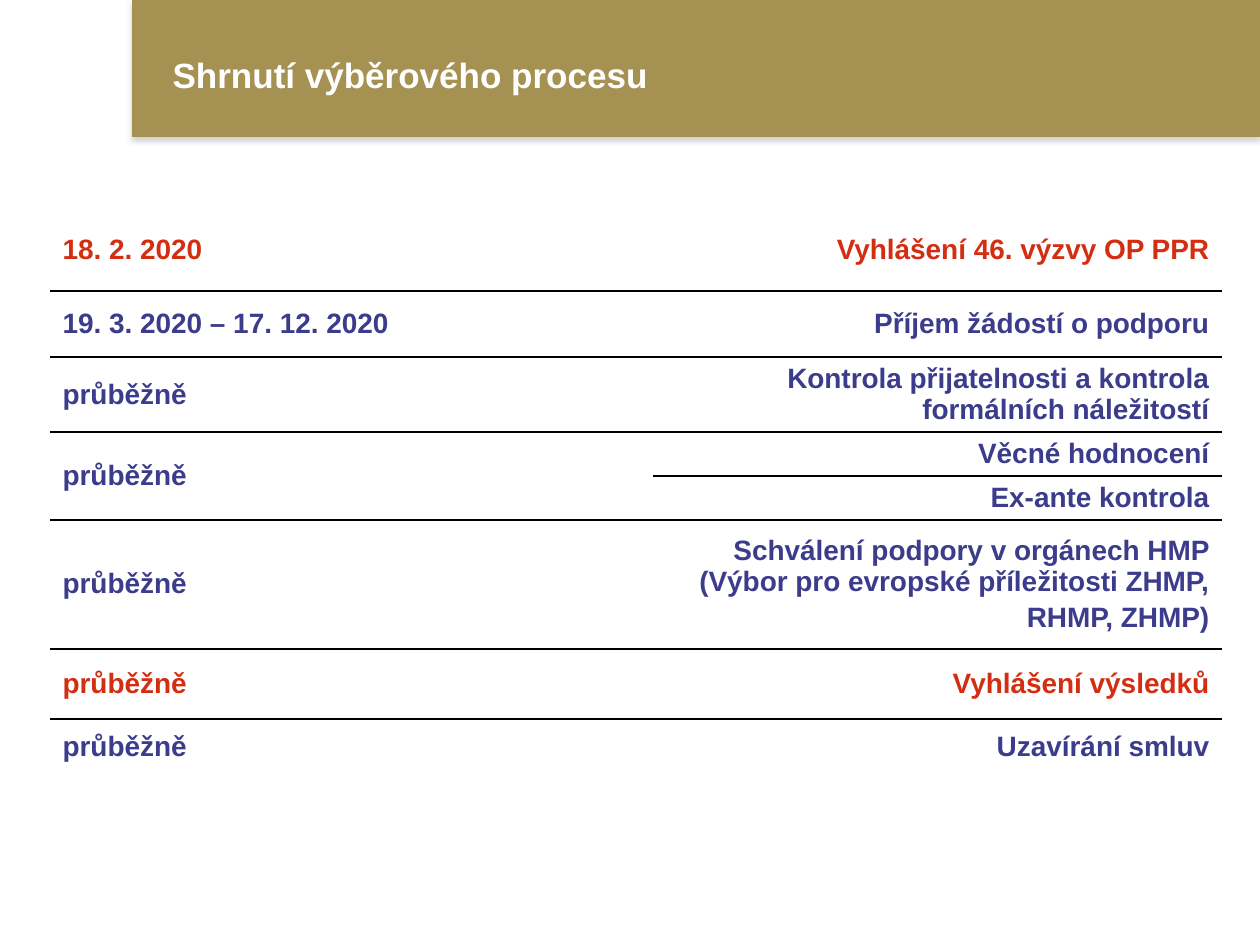
from lxml.etree import SubElement
from pptx import Presentation
from pptx.dml.color import RGBColor
from pptx.enum.shapes import MSO_SHAPE
from pptx.enum.text import MSO_ANCHOR, PP_ALIGN
from pptx.oxml import parse_xml
from pptx.oxml.ns import nsdecls, qn
from pptx.util import Emu, Pt

PX_PER_INCH = 126
COLOURS = {
    "band": "A59253",
    "shadow": "808080",
    "title": "FFFFFF",
    "milestone": "D42E12",
    "step": "3C3C8C",
    "rule": "000000",
}
PLAIN_STYLE = "{2D5ABB26-0587-4C30-8999-92F81FD0307C}"
COLUMN_WIDTHS = [603, 569]
ONGOING = "průběžně"
SCHEDULE = [
    (83, "18. 2. 2020", "Vyhlášení 46. výzvy OP PPR", "milestone"),
    (66, "19. 3. 2020 – 17. 12. 2020", "Příjem žádostí o podporu", "step"),
    (75, ONGOING, "Kontrola přijatelnosti a kontrola formálních náležitostí", "step"),
    (44, ONGOING, "Věcné hodnocení", "step"),
    (44, "", "Ex-ante kontrola", "step"),
    (129, ONGOING, "Schválení podpory v orgánech HMP (Výbor pro evropské "
     "příležitosti ZHMP,\nRHMP, ZHMP)", "step"),
    (70, ONGOING, "Vyhlášení výsledků", "milestone"),
    (57, ONGOING, "Uzavírání smluv", "step"),
]


def px(length):
    """Convert whole pixels to EMU."""
    return Emu(round(length * 914400 / PX_PER_INCH))


def colour(name):
    """Look up a named colour."""
    return RGBColor.from_string(COLOURS[name])


def format_text(frame, size, colour_name, align):
    """Apply bold Arial and alignment to every paragraph."""
    for index, paragraph in enumerate(frame.paragraphs):
        paragraph.alignment = align
        paragraph.space_before = Pt(size * 0.2 if index else 0)
        for run in paragraph.runs:
            run.font.name = "Arial"
            run.font.size = Pt(size)
            run.font.bold = True
            run.font.color.rgb = colour(colour_name)


def add_band(slide):
    """Draw the header band with its soft shadow behind the title."""
    band = slide.shapes.add_shape(MSO_SHAPE.RECTANGLE, px(132), px(0), px(1128), px(137))
    band.fill.solid()
    band.fill.fore_color.rgb = colour("band")
    band.line.fill.background()
    band.shadow.inherit = False
    effects = band._element.spPr.find(qn("a:effectLst"))
    shadow = SubElement(effects, qn("a:outerShdw"), blurRad=str(Pt(3.1)),
                        dist=str(Pt(1.8)), dir="5400000", rotWithShape="0")
    tint = SubElement(shadow, qn("a:srgbClr"), val=COLOURS["shadow"])
    SubElement(tint, qn("a:alpha"), val="35000")
    slide.shapes._spTree.insert(2, band._element)


def set_title(slide, wording):
    """Place and format the slide title."""
    title = slide.shapes.title
    title.left, title.top, title.width, title.height = map(px, (160, -14, 1061, 183))
    frame = title.text_frame
    frame.text = wording
    frame.word_wrap = True
    frame.vertical_anchor = MSO_ANCHOR.MIDDLE
    frame.paragraphs[0].line_spacing = 0.9
    format_text(frame, 20, "title", PP_ALIGN.LEFT)


def add_rule_below(cell):
    """Draw a thin rule along the bottom of a cell."""
    cell._tc.get_or_add_tcPr().insert(0, parse_xml(
        f'<a:lnB {nsdecls("a")} w="{Pt(1)}"><a:solidFill>'
        f'<a:srgbClr val="{COLOURS["rule"]}"/></a:solidFill></a:lnB>'))


def fill_cell(cell, wording, colour_name, align):
    """Write one schedule entry into a transparent cell."""
    cell.text_frame.text = wording
    cell.vertical_anchor = MSO_ANCHOR.MIDDLE
    cell.fill.background()
    format_text(cell.text_frame, 16, colour_name, align)


def add_schedule(slide):
    """Build the table of dates and steps."""
    heights = [entry[0] for entry in SCHEDULE]
    schedule = slide.shapes.add_table(
        len(SCHEDULE), 2, px(50), px(208), px(sum(COLUMN_WIDTHS)), px(sum(heights))).table
    schedule.first_row = schedule.horz_banding = False
    schedule._tbl.tblPr.find(qn("a:tableStyleId")).text = PLAIN_STYLE
    for column, width in zip(schedule.columns, COLUMN_WIDTHS):
        column.width = px(width)
    for index, (height, date, step, colour_name) in enumerate(SCHEDULE):
        schedule.rows[index].height = px(height)
        date_cell, step_cell = schedule.rows[index].cells
        fill_cell(date_cell, date, colour_name, PP_ALIGN.LEFT)
        fill_cell(step_cell, step, colour_name, PP_ALIGN.RIGHT)
        if index < len(SCHEDULE) - 1:
            add_rule_below(date_cell)
            add_rule_below(step_cell)
    schedule.cell(3, 0).merge(schedule.cell(4, 0))


def main():
    """Build and save the slide."""
    deck = Presentation()
    deck.slide_width, deck.slide_height = px(1260), px(945)
    slide = deck.slides.add_slide(deck.slide_layouts[5])
    add_band(slide)
    set_title(slide, "Shrnutí výběrového procesu")
    add_schedule(slide)
    deck.save("out.pptx")


if __name__ == "__main__":
    main()
